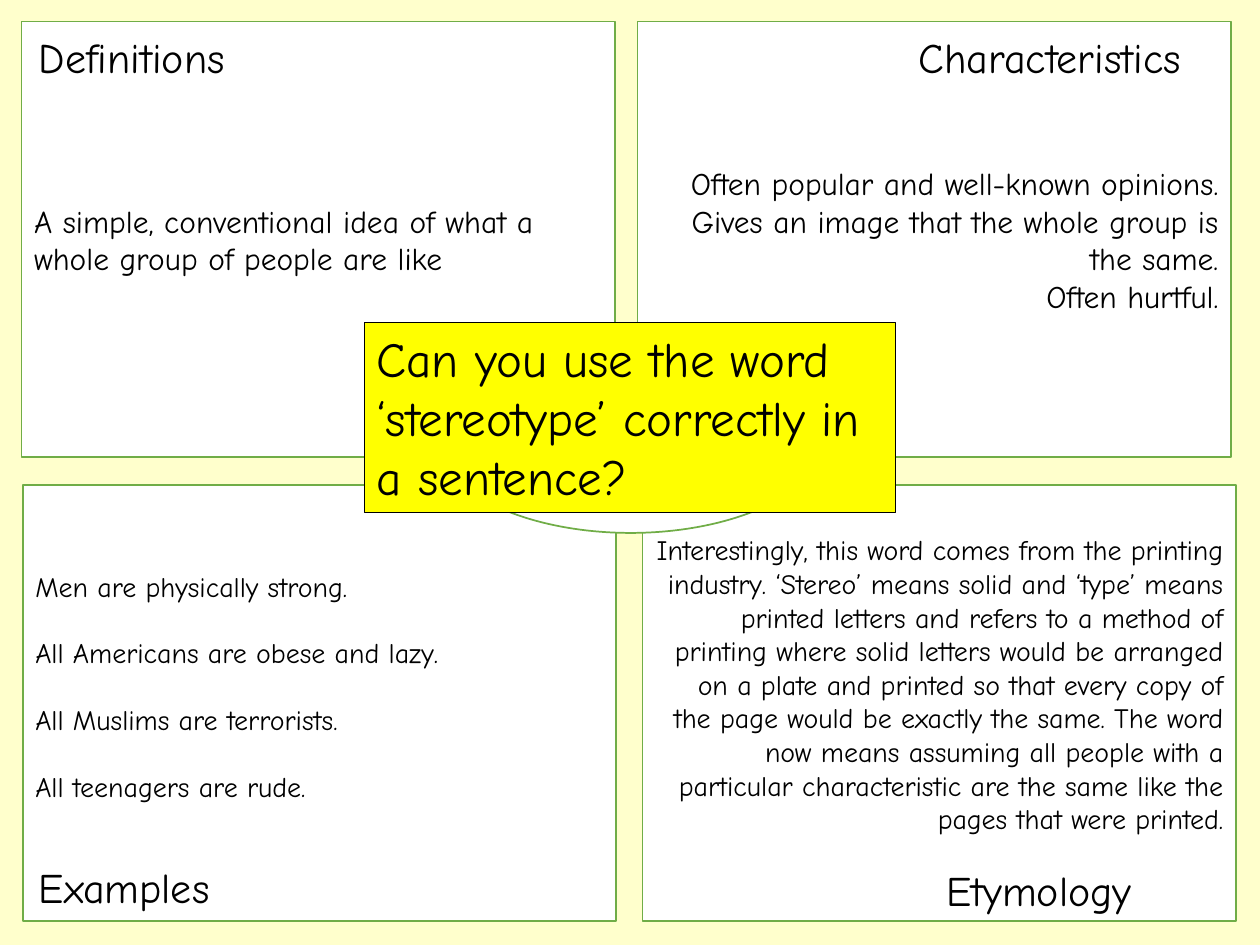
from dataclasses import dataclass

from lxml import etree
from pptx import Presentation
from pptx.dml.color import RGBColor
from pptx.enum.shapes import MSO_SHAPE
from pptx.enum.text import MSO_ANCHOR, MSO_AUTO_SIZE, PP_ALIGN
from pptx.oxml.ns import qn
from pptx.util import Pt

LEFT, RIGHT = PP_ALIGN.LEFT, PP_ALIGN.RIGHT
TOP, MIDDLE = MSO_ANCHOR.TOP, MSO_ANCHOR.MIDDLE
FIXED = MSO_AUTO_SIZE.NONE
OVAL = MSO_SHAPE.OVAL

PX = 9144  # EMU per px, 100 px to the inch
FONT = "Comic Neue"
CREAM, WHITE, GREEN = "FFFFCC", "FFFFFF", "70AD47"
YELLOW, BLACK = "FFFF00", "000000"
WIDE, HIGH = 471, 346  # panel size


@dataclass
class Panel:
    slot: int
    left: int
    top: int
    lines: list[str]
    size: int
    align: PP_ALIGN = LEFT
    gap: int = 0  # points between paragraphs
    base: int = 5  # bottom inset


@dataclass
class Label:
    text: str
    left: int
    top: int
    width: int


PANELS = [
    Panel(1, 17, 17,
          ["A simple, conventional idea of what a whole group of people are like"], 18),
    Panel(2, 18, 385,
          ["Men are physically strong.",
           "All Americans are obese and lazy.",
           "All Muslims are terrorists.",
           "All teenagers are rude."], 16, gap=19, base=32),
    Panel(3, 506, 17,
          ["Often popular and well-known opinions.",
           "Gives an image that the whole group is the same.",
           "Often hurtful."], 18, RIGHT),
    Panel(4, 510, 385,
          ["Interestingly, this word comes from the printing industry. "
           "‘Stereo’ means solid and ‘type’ means printed letters and refers to "
           "a method of printing where solid letters would be arranged on a "
           "plate and printed so that every copy of the page would be exactly "
           "the same. The word now means assuming all people with a particular "
           "characteristic are the same like the pages that were printed."],
          16, RIGHT, base=35),
]
LABELS = [
    Label("Definitions", 21, 20, 194),
    Label("Characteristics", 719, 20, 263),
    Label("Examples", 21, 679, 166),
    Label("Etymology", 741, 681, 181),
]


def color(code: str) -> RGBColor:
    return RGBColor.from_string(code)


def apply(item, values: dict) -> None:
    for name, value in values.items():
        setattr(item, name, value)


def place(shape, left: int, top: int, width: int, height: int) -> None:
    apply(shape, {"left": left * PX, "top": top * PX,
                  "width": width * PX, "height": height * PX})


def paint(shape, fill: str, edge: str, weight: float) -> None:
    shape.fill.solid()
    shape.fill.fore_color.rgb = color(fill)
    shape.line.color.rgb = color(edge)
    shape.line.width = Pt(weight)


def write(shape, lines: list[str], size: int, align=LEFT,
          anchor=TOP, gap: int = 0, base: int = 5) -> None:
    frame = shape.text_frame
    frame.text = "\n".join(lines)
    apply(frame, {"word_wrap": True, "auto_size": FIXED, "vertical_anchor": anchor,
                  "margin_left": 10 * PX, "margin_right": 10 * PX,
                  "margin_top": 5 * PX, "margin_bottom": base * PX})
    for row, para in enumerate(frame.paragraphs):
        apply(para, {"alignment": align, "space_before": Pt(gap if row else 0),
                     "space_after": Pt(0)})
        # Plain paragraph: no bullet, no indent
        props = para._p.get_or_add_pPr()
        props.set("marL", "0")
        props.set("indent", "0")
        etree.SubElement(props, qn("a:buNone"))
        for run in para.runs:
            apply(run.font, {"name": FONT, "size": Pt(size), "bold": False})
            run.font.color.rgb = color(BLACK)


def add_panel(slide, panel: Panel) -> None:
    shape = slide.placeholders[panel.slot]
    place(shape, panel.left, panel.top, WIDE, HIGH)
    paint(shape, WHITE, GREEN, 1)
    write(shape, panel.lines, panel.size, panel.align, MIDDLE, panel.gap, panel.base)


def add_label(slide, label: Label) -> None:
    box = slide.shapes.add_textbox(0, 0, 0, 0)
    place(box, label.left, label.top, label.width, 50)
    write(box, [label.text], 24)


def main() -> None:
    deck = Presentation()
    apply(deck, {"slide_width": 1000 * PX, "slide_height": 750 * PX})
    slide = deck.slides.add_slide(deck.slide_layouts.get_by_name("Comparison"))
    back = slide.background.fill
    back.solid()
    back.fore_color.rgb = color(CREAM)

    # Four panels, the centre oval, then the headings
    for panel in PANELS:
        add_panel(slide, panel)
    oval = slide.shapes.add_shape(OVAL, 0, 0, 0, 0)
    oval.shadow.inherit = False
    place(oval, 340, 257, 321, 166)
    paint(oval, WHITE, GREEN, 1)
    for label in LABELS:
        add_label(slide, label)

    # Question box, brought to the front
    title = slide.shapes.title
    place(title, 289, 256, 422, 151)
    paint(title, YELLOW, BLACK, 0.75)
    write(title, ["Can you use the word ‘stereotype’ correctly in a sentence?"], 28)
    slide.shapes._spTree.append(title._element)

    deck.save("out.pptx")


if __name__ == "__main__":
    main()
